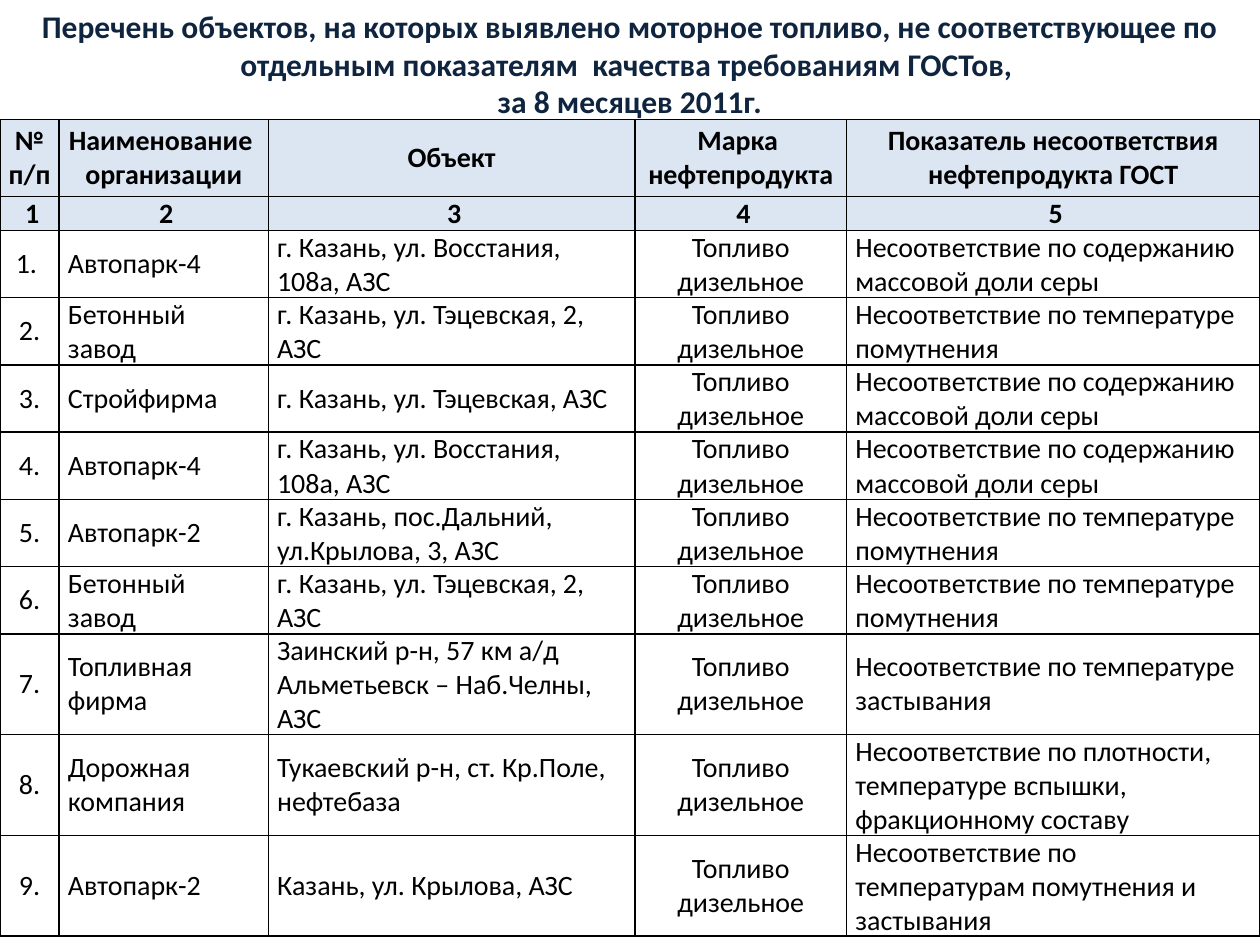
from dataclasses import dataclass

from lxml import etree
from pptx import Presentation
from pptx.dml.color import RGBColor
from pptx.enum import text as t
from pptx.oxml import ns
from pptx.util import Inches, Pt

FONT = "Calibri"
BLACK, NAVY, PALE = "000000", "0F243E", "DCE6F2"
FUEL = "Топливо дизельное"
SULFUR = "Несоответствие по содержанию массовой доли серы"
CLOUD = "Несоответствие по температуре помутнения"
CENTER, LEFT = t.PP_ALIGN.CENTER, t.PP_ALIGN.LEFT


@dataclass
class Style:
    size: int = 16
    color: str = BLACK
    bold: bool = False
    align: t.PP_ALIGN = LEFT
    left: float = 0
    hang: float = 0


@dataclass
class Case:
    firm: str
    place: str
    fault: str
    high: float = 0.53


TITLE = [
    "Перечень объектов, на которых выявлено моторное топливо, не соответствующее по "
    "отдельным показателям  качества требованиям ГОСТов, ",
    "за 8 месяцев 2011г.",
]
HEADS = [
    ["№", "п/п"],
    ["Наименование ", "организации"],
    ["Объект"],
    ["Марка ", "нефтепродукта"],
    ["Показатель несоответствия нефтепродукта ГОСТ"],
]
CASES = [
    Case("Автопарк-4", "г. Казань, ул. Восстания, 108а, АЗС", SULFUR),
    Case("Бетонный завод", "г. Казань, ул. Тэцевская, 2, АЗС", CLOUD),
    Case("Стройфирма", "г. Казань, ул. Тэцевская, АЗС", SULFUR),
    Case("Автопарк-4", "г. Казань, ул. Восстания, 108а, АЗС", SULFUR),
    Case("Автопарк-2", "г. Казань, пос.Дальний, ул.Крылова, 3, АЗС", CLOUD),
    Case("Бетонный завод", "г. Казань, ул. Тэцевская, 2, АЗС", CLOUD),
    Case("Топливная фирма", "Заинский р-н, 57 км а/д Альметьевск – Наб.Челны, АЗС",
         "Несоответствие по температуре застывания", 0.8),
    Case("Дорожная компания", "Тукаевский р-н, ст. Кр.Поле, нефтебаза",
         "Несоответствие по плотности, температуре вспышки, фракционному составу", 0.8),
    Case("Автопарк-2", "Казань, ул. Крылова, АЗС",
         "Несоответствие по температурам помутнения и застывания", 0.8),
]
WIDTHS = [0.47, 1.66, 2.91, 1.68, 3.28]

HEAD = Style(bold=True, align=CENTER)
INDEX = Style(bold=True, align=CENTER, left=0.16, hang=-0.12)
COUNT = Style(align=CENTER, left=0.38, hang=-0.38)
BODY, MIDDLE = Style(), Style(align=CENTER)


def color(code: str) -> RGBColor:
    return RGBColor.from_string(code)


def write(frame, lines: list[str], style: Style) -> None:
    for i, line in enumerate(lines):
        para = frame.add_paragraph() if i else frame.paragraphs[0]
        para.alignment = style.align
        para.space_before = Pt(0)
        if style.left:
            props = para._p.get_or_add_pPr()
            props.set("marL", str(Inches(style.left)))
            props.set("indent", str(Inches(style.hang)))
        run = para.add_run()
        run.text = line
        font = run.font
        font.name, font.size, font.bold = FONT, Pt(style.size), style.bold
        font.color.rgb = color(style.color)


def border(cell) -> None:
    props = cell._tc.get_or_add_tcPr()
    for side in ("lnL", "lnR", "lnT", "lnB"):
        line = etree.SubElement(props, ns.qn(f"a:{side}"), w=str(Pt(1)))
        fill = etree.SubElement(line, ns.qn("a:solidFill"))
        etree.SubElement(fill, ns.qn("a:srgbClr"), val=BLACK)


def fill_cell(cell, lines: list[str], style: Style, inset: float, fill: str = "") -> None:
    border(cell)
    if fill:
        cell.fill.solid()
        cell.fill.fore_color.rgb = color(fill)
    else:
        cell.fill.background()
    cell.margin_left = cell.margin_right = Inches(inset)
    cell.margin_top = cell.margin_bottom = 0
    cell.vertical_anchor = t.MSO_ANCHOR.MIDDLE
    write(cell.text_frame, lines, style)


def add_title(slide) -> None:
    title = slide.shapes.title
    title.left, title.top = Inches(0), Inches(0)
    title.width, title.height = Inches(10), Inches(1.01)
    frame = title.text_frame
    frame.word_wrap = True
    frame.auto_size = t.MSO_AUTO_SIZE.SHAPE_TO_FIT_TEXT
    frame.vertical_anchor = t.MSO_ANCHOR.MIDDLE
    write(frame, TITLE, Style(18, NAVY, True, CENTER))


def add_grid(slide) -> None:
    highs = [0.61, 0.27] + [case.high for case in CASES]
    grid = slide.shapes.add_table(
        len(highs), len(WIDTHS), Inches(0), Inches(0.95),
        Inches(sum(WIDTHS)), Inches(sum(highs))).table
    grid.first_row = grid.horz_banding = False
    for col, wide in zip(grid.columns, WIDTHS):
        col.width = Inches(wide)
    for row, high in zip(grid.rows, highs):
        row.height = Inches(high)
    for c, lines in enumerate(HEADS):
        fill_cell(grid.cell(0, c), lines, HEAD, 0.06, PALE)
        fill_cell(grid.cell(1, c), [str(c + 1)], INDEX, 0.06, PALE)
    for n, case in enumerate(CASES, 1):
        fill_cell(grid.cell(n + 1, 0), ["1. " if n == 1 else f"{n}."], COUNT, 0.06)
        for c, words in enumerate((case.firm, case.place, FUEL, case.fault), 1):
            fill_cell(grid.cell(n + 1, c), [words], MIDDLE if c == 3 else BODY, 0.07)


def main() -> None:
    deck = Presentation()
    deck.slide_width, deck.slide_height = Inches(10), Inches(7.5)
    slide = deck.slides.add_slide(deck.slide_layouts[5])
    add_title(slide)
    add_grid(slide)
    deck.save("out.pptx")


if __name__ == "__main__":
    main()
